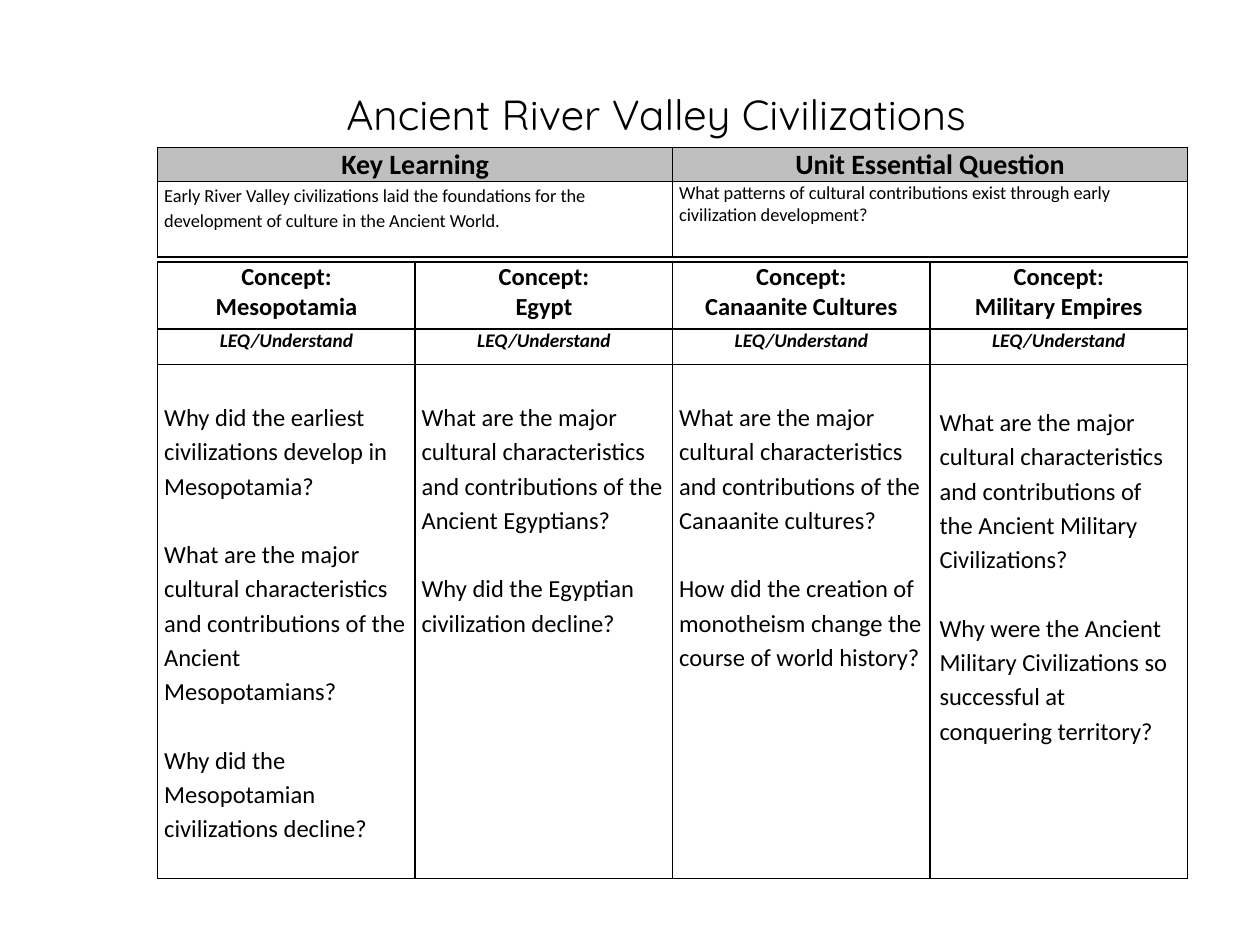
import pptx
import pptx.util
import pptx.dml.color
import pptx.enum.text
import pptx.oxml

Cm, Pt = pptx.util.Cm, pptx.util.Pt
RGB = pptx.dml.color.RGBColor.from_string
CENTER = pptx.enum.text.PP_ALIGN.CENTER
LEFT = pptx.enum.text.PP_ALIGN.LEFT
MIDDLE = pptx.enum.text.MSO_ANCHOR.MIDDLE
COLORS = {"ink": "000000", "paper": "FFFFFF", "header": "BFBFBF"}
NAMESPACE = "http://schemas.openxmlformats.org/drawingml/2006/main"


def add_grid(slide, top, column_widths, row_heights):
    table = slide.shapes.add_table(
        len(row_heights), len(column_widths), Cm(3.18), Cm(top),
        Cm(sum(column_widths)), Cm(sum(row_heights))).table
    table.horz_banding = False
    for column, width in zip(table.columns, column_widths):
        column.width = Cm(width)
    for row, height in zip(table.rows, row_heights):
        row.height = Cm(height)
    return table


def fill_cell(cell, lines, size, fill="paper", bold=False, italic=False,
              align=CENTER, spacing=None, gap=0, side=0.13, top=0):
    cell.margin_left = cell.margin_right = Cm(side)
    cell.margin_top, cell.margin_bottom = Cm(top), 0
    properties = cell._tc.get_or_add_tcPr()
    for edge in ("lnL", "lnR", "lnT", "lnB"):
        properties.append(pptx.oxml.parse_xml(
            f'<a:{edge} xmlns:a="{NAMESPACE}" w="12700"><a:solidFill>'
            f'<a:srgbClr val="{COLORS["ink"]}"/></a:solidFill></a:{edge}>'))
    cell.fill.solid()
    cell.fill.fore_color.rgb = RGB(COLORS[fill])
    cell.text = "\n".join(lines)
    for number, paragraph in enumerate(cell.text_frame.paragraphs):
        paragraph.alignment = align
        if spacing:
            paragraph.line_spacing = spacing
        if gap and number:
            paragraph.space_before = Pt(gap)
        font = paragraph.font
        font.name, font.size = "Calibri", Pt(size)
        font.bold, font.italic = bold, italic
        font.color.rgb = RGB(COLORS["ink"])


deck = pptx.Presentation()
deck.slide_width, deck.slide_height = Cm(25.4), Cm(19.05)
slide = deck.slides.add_slide(deck.slide_layouts[5])

title = slide.shapes.title
title.left, title.top, title.width, title.height = Cm(3.38), Cm(1.27), Cm(19.69), Cm(2.03)
title.text_frame.text = "Ancient River Valley Civilizations"
title.text_frame.vertical_anchor = MIDDLE
heading = title.text_frame.paragraphs[0]
heading.alignment = CENTER
heading.font.name, heading.font.size = "Quicksand", Pt(24)
heading.font.color.rgb = RGB(COLORS["ink"])

concepts = [
    ("Mesopotamia", [
        "Why did the earliest civilizations develop in Mesopotamia?",
        "What are the major cultural characteristics and contributions of the Ancient Mesopotamians?",
        "Why did the Mesopotamian civilizations decline?"], 0.13, 0.69),
    ("Egypt", [
        "What are the major cultural characteristics and contributions of the Ancient Egyptians?",
        "Why did the Egyptian civilization decline?"], 0.13, 0.69),
    ("Canaanite Cultures", [
        "What are the major cultural characteristics and contributions of the Canaanite cultures?",
        "How did the creation of monotheism change the course of world history?"], 0.13, 0.69),
    ("Military Empires", [
        "What are the major cultural characteristics and contributions of the Ancient Military Civilizations?",
        "Why were the Ancient Military Civilizations so successful at conquering territory?"], 0.19, 0.79),
]
concept_grid = add_grid(slide, 5.28, [5.19] * 4, [1.35, 0.72, 10.36])
for column, (concept, questions, side, top) in enumerate(concepts):
    fill_cell(concept_grid.cell(0, column), ["Concept:", concept], 14, bold=True, side=side)
    fill_cell(concept_grid.cell(1, column), ["LEQ/Understand"], 11,
              bold=True, italic=True, side=side)
    fill_cell(concept_grid.cell(2, column), questions, 14, align=LEFT,
              spacing=1.15, gap=19.6, side=side, top=top)

overview = [
    ("Key Learning", "Early River Valley civilizations laid the foundations for "
     "the development of culture in the Ancient World.", 1.15),
    ("Unit Essential Question", "What patterns of cultural contributions exist "
     "through early civilization development?", None),
]
overview_grid = add_grid(slide, 2.97, [10.38] * 2, [0.69, 1.52])
for column, (label, statement, spacing) in enumerate(overview):
    fill_cell(overview_grid.cell(0, column), [label], 16, fill="header", bold=True)
    fill_cell(overview_grid.cell(1, column), [statement], 10.5, align=LEFT, spacing=spacing)
    overview_grid.cell(1, column).fill.background()

deck.save("out.pptx")
